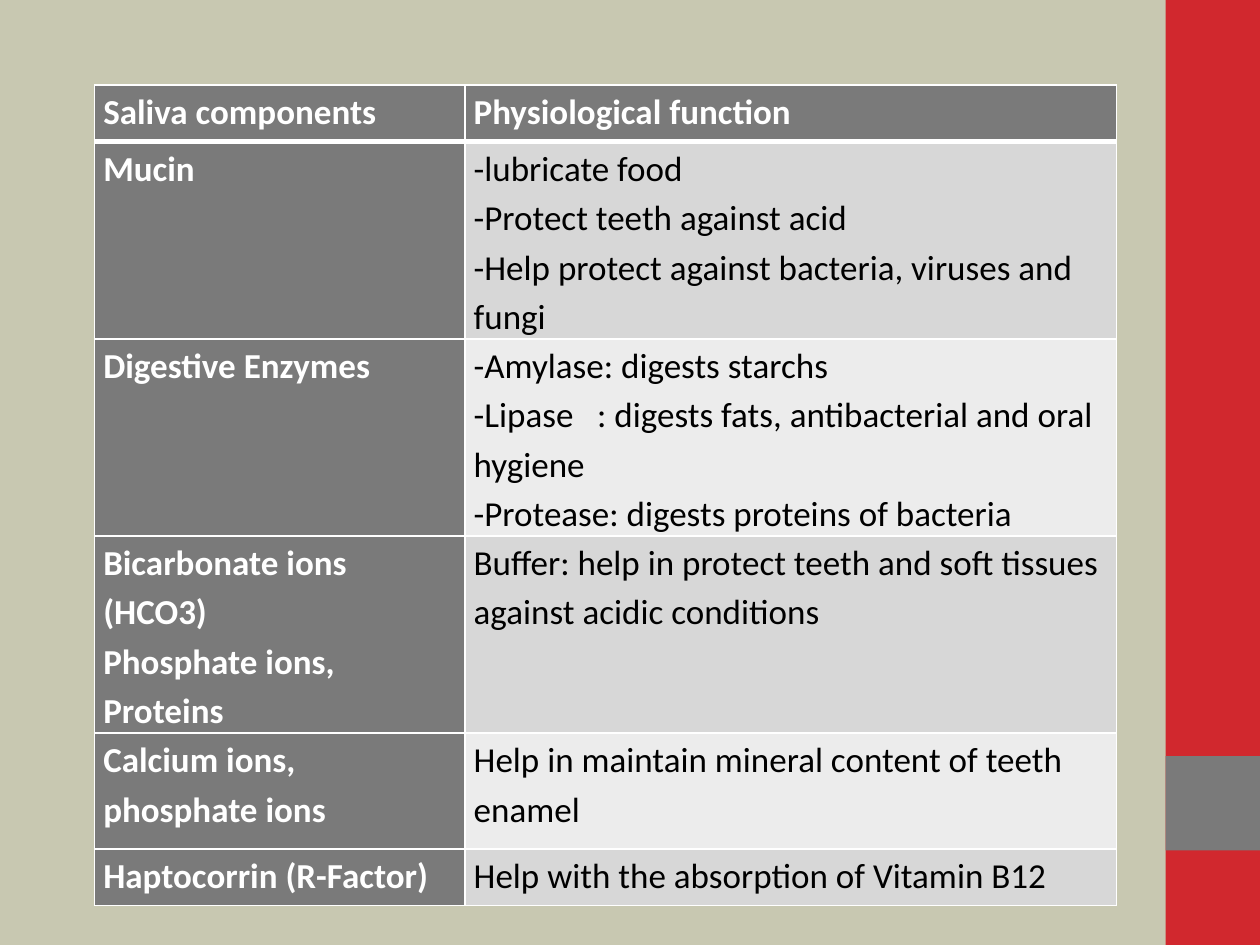
from lxml import etree
from pptx import Presentation
from pptx import util as u
from pptx.dml.color import RGBColor
from pptx.enum import shapes, text
from pptx.oxml.ns import qn

SAND = RGBColor(0xC8, 0xC8, 0xB1)
RED = RGBColor(0xD1, 0x28, 0x2E)
GRAY = RGBColor(0x7A, 0x7A, 0x7A)
BANDS = RGBColor(0xD7, 0xD7, 0xD7), RGBColor(0xEC, 0xEC, 0xEC)
WHITE = RGBColor(0xFF, 0xFF, 0xFF)
BLACK = RGBColor(0, 0, 0)

HEADINGS = ["Saliva components", "Physiological function"]
COMPONENTS = [
    ("Mucin",
     "-lubricate food\n-Protect teeth against acid\n"
     "-Help protect against bacteria, viruses and fungi"),
    ("Digestive Enzymes",
     "-Amylase: digests starchs\n"
     "-Lipase   : digests fats, antibacterial and oral hygiene\n"
     "-Protease: digests proteins of bacteria"),
    ("Bicarbonate ions (HCO3)\nPhosphate ions, Proteins",
     "Buffer: help in protect teeth and soft tissues against acidic conditions"),
    ("Calcium ions, phosphate ions",
     "Help in maintain mineral content of teeth enamel"),
    ("Haptocorrin (R-Factor)", "Help with the absorption of Vitamin B12"),
]
COLUMN_WIDTHS = [11.76, 20.68]
ROW_HEIGHTS = [1.8, 5.56, 5.56, 6.2, 3.68, 1.8]


def write(frame, content, size=20, font="Calibri", color=BLACK, bold=False, spacing=1.15):
    """Fill a text frame with one paragraph per line of content."""
    frame.text = content
    for paragraph in frame.paragraphs:
        paragraph.alignment = text.PP_ALIGN.LEFT
        paragraph.line_spacing = spacing
        for run in paragraph.runs:
            run.font.size = u.Pt(size)
            run.font.name = font
            run.font.bold = bold
            run.font.color.rgb = color


class Deck:
    """Hold the style and current slide on a grid of 40 columns by 30 rows."""

    def __init__(self):
        self.prs = Presentation()
        self.prs.slide_width, self.prs.slide_height = u.Inches(10), u.Inches(7.5)
        self.slide = self.prs.slides.add_slide(self.prs.slide_layouts[6])
        self.slide.background.fill.solid()
        self.slide.background.fill.fore_color.rgb = SAND

    def grid(self, *units):
        return [round(self.prs.slide_width / 40 * n) for n in units]

    def block(self, column, row, columns, rows, color):
        block = self.slide.shapes.add_shape(
            shapes.MSO_SHAPE.RECTANGLE, *self.grid(column, row, columns, rows))
        block.shadow.inherit = False
        block.fill.solid()
        block.fill.fore_color.rgb = color
        block.line.fill.background()

    def borders(self, cell, **widths):
        properties = cell._tc.get_or_add_tcPr()
        for place, side in enumerate("LRTB"):
            line = etree.Element(qn(f"a:ln{side}"), w=str(u.Pt(widths.get(side, 1))))
            solid = etree.SubElement(line, qn("a:solidFill"))
            etree.SubElement(solid, qn("a:srgbClr"), val=str(WHITE))
            properties.insert(place, line)

    def cell(self, cell, content, fill, **style):
        cell.margin_left = cell.margin_right = u.Inches(0.07)
        cell.margin_top = cell.margin_bottom = 0
        cell.vertical_anchor = text.MSO_ANCHOR.TOP
        cell.fill.solid()
        cell.fill.fore_color.rgb = fill
        write(cell.text_frame, content, **style)

    def table(self, column, row, widths, heights, headings, records):
        table = self.slide.shapes.add_table(
            len(heights), len(widths),
            *self.grid(column, row, sum(widths), sum(heights))).table
        for part, width in zip(table.columns, self.grid(*widths)):
            part.width = width
        for part, height in zip(table.rows, self.grid(*heights)):
            part.height = height
        for r, record in enumerate([headings, *records]):
            for c, content in enumerate(record):
                cell = table.cell(r, c)
                if r == 0 or c == 0:
                    self.cell(cell, content, GRAY, color=WHITE, bold=True)
                else:
                    self.cell(cell, content, BANDS[(r - 1) % 2])
                self.borders(cell, T=3 if r == 1 else 1, B=3 if r == 0 else 1)


def main():
    deck = Deck()
    deck.block(37, 0, 3, 30, RED)
    deck.block(37, 24, 3, 3, GRAY)
    deck.table(3, 2.7, COLUMN_WIDTHS, ROW_HEIGHTS, HEADINGS, COMPONENTS)
    deck.prs.save("out.pptx")


if __name__ == "__main__":
    main()
